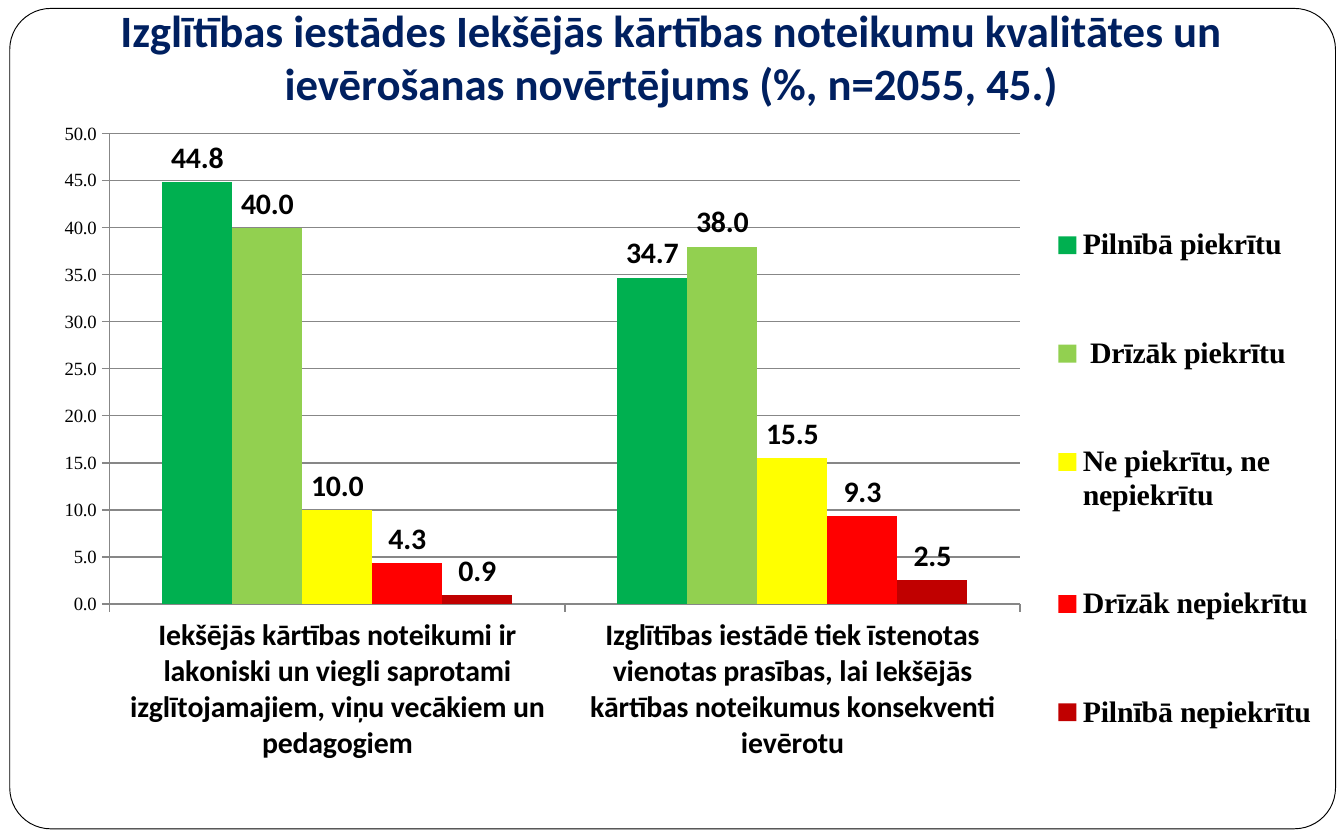
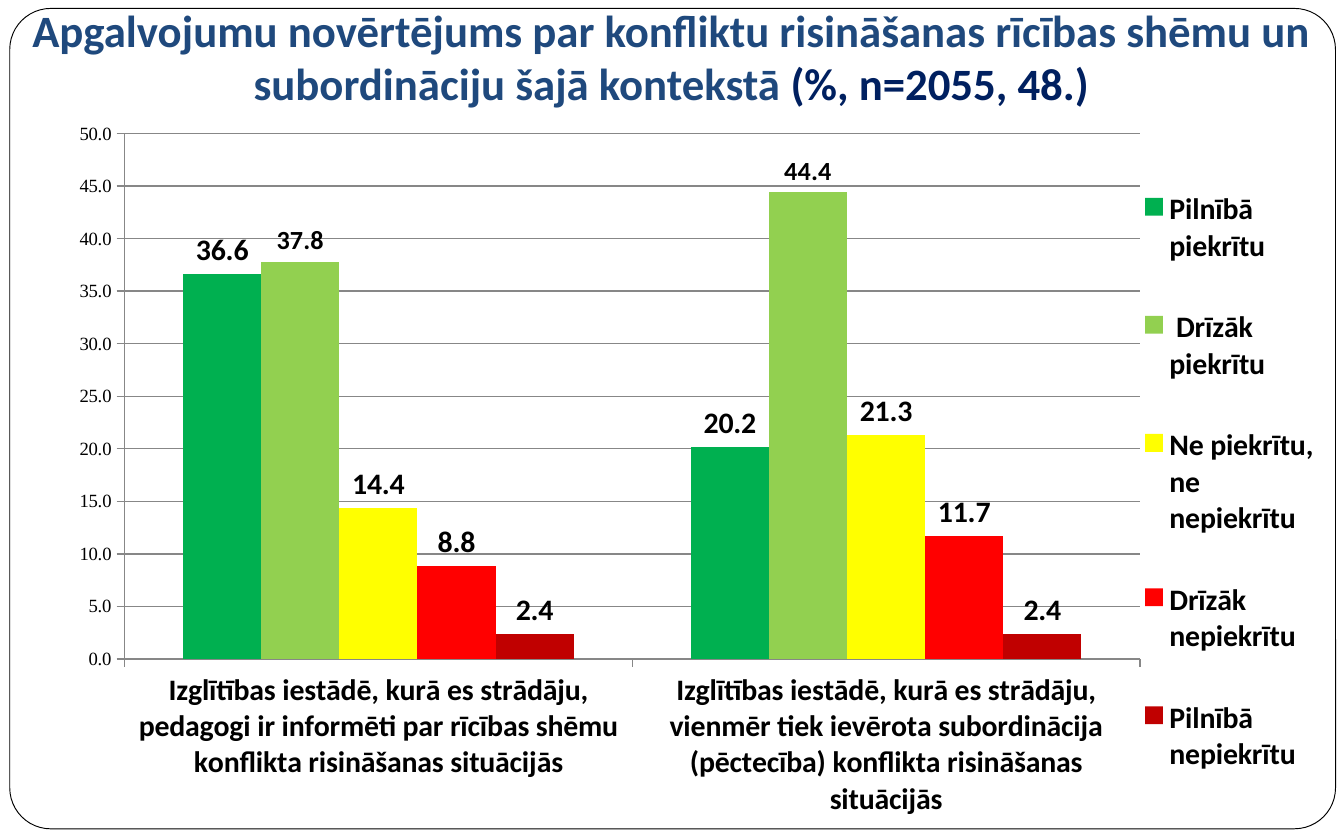
"""Build two survey slides with clustered column charts."""
from lxml import etree
from pptx import Presentation
from pptx import util as u
from pptx.chart import data
from pptx.dml import color
from pptx.enum import chart as ce, shapes, text
from pptx.oxml import ns

PX = 9525
COLORS = {"white": "FFFFFF", "black": "000000", "navy": "002060",
          "blue": "1F497D", "grid": "878787"}
ANSWERS = {"Pilnībā piekrītu": "00B050", " Drīzāk piekrītu": "92D050",
           "Ne piekrītu, ne nepiekrītu": "FFFF00",
           "Drīzāk nepiekrītu": "FF0000", "Pilnībā nepiekrītu": "C00000"}
BOLD = {"name": "Calibri", "size": u.Pt(16), "bold": True}
TITLE = {**BOLD, "size": u.Pt(24)}
FRAME_BOX = (7, 6, 947, 586)
TITLE_BOX = (-49, 12, 1009, 76)

SLIDES = [
    {"title": [("Izglītības iestādes Iekšējās kārtības noteikumu kvalitātes un "
                "ievērošanas novērtējums (%, n=2055, 45.)", "navy")],
     "box": (0, 88, 1032, 512),
     "plot": (0.076, 0.012, 0.63, 0.658),
     "legend": (0.73, 0.04, 0.18, 0.91),
     "legend_pos": ce.XL_LEGEND_POSITION.BOTTOM,
     "legend_font": {**BOLD, "name": "Times New Roman"},
     "label_sizes": [16] * 5,
     "data": {
         "Iekšējās kārtības noteikumi ir lakoniski un viegli saprotami "
         "izglītojamajiem, viņu vecākiem un pedagogiem":
             (44.8, 40, 10, 4.3, 0.9),
         "Izglītības iestādē tiek īstenotas vienotas prasības, lai Iekšējās "
         "kārtības noteikumus konsekventi ievērotu":
             (34.7, 38, 15.5, 9.3, 2.5)}},
    {"title": [("Apgalvojumu novērtējums par konfliktu risināšanas rīcības "
                "shēmu un subordināciju šajā kontekstā ", "blue"),
               ("(%, n=2055, 48.)", "navy")],
     "box": (12, 88, 1013, 512),
     "plot": (0.076, 0.012, 0.716, 0.735),
     "legend": (0.79, 0.03, 0.13, 0.94),
     "legend_pos": ce.XL_LEGEND_POSITION.RIGHT,
     "legend_font": BOLD,
     "label_sizes": [16, 14, 16, 16, 16],
     "data": {
         "Izglītības iestādē, kurā es strādāju, pedagogi ir informēti par "
         "rīcības shēmu konflikta risināšanas situācijās":
             (36.6, 37.8, 14.4, 8.8, 2.4),
         "Izglītības iestādē, kurā es strādāju, vienmēr tiek ievērota "
         "subordinācija (pēctecība) konflikta risināšanas situācijās":
             (20.2, 44.4, 21.3, 11.7, 2.4)}},
]


def rgb(name):
    """Return the colour with this name or hex value."""
    return color.RGBColor.from_string(COLORS.get(name, name))


def emu(box):
    """Turn a box in px into EMU."""
    return [v * PX for v in box]


def apply(obj, values):
    """Set each attribute in a dict of format values."""
    for name, value in values.items():
        setattr(obj, name, value)


def style_font(font, values, name="black"):
    """Give a font its format values and colour."""
    apply(font, values)
    font.color.rgb = rgb(name)


def style_line(line, name, width):
    """Give a line its colour and width in points."""
    line.color.rgb = rgb(name)
    line.width = u.Pt(width)


def add_frame(s):
    """Draw the rounded frame behind everything else."""
    sp = s.shapes.add_shape(shapes.MSO_SHAPE.ROUNDED_RECTANGLE, *emu(FRAME_BOX))
    sp.adjustments[0] = 0.05
    sp.shadow.inherit = False
    sp.fill.solid()
    sp.fill.fore_color.rgb = rgb("white")
    style_line(sp.line, "black", 0.5)
    s.shapes.element.insert(2, sp.element)


def add_title(s, runs):
    """Place the title and write its coloured runs."""
    sp = s.shapes.title
    apply(sp, dict(zip(("left", "top", "width", "height"), emu(TITLE_BOX))))
    tf = sp.text_frame
    apply(tf, {"word_wrap": True, "auto_size": text.MSO_AUTO_SIZE.NONE,
               "vertical_anchor": text.MSO_ANCHOR.BOTTOM,
               "margin_left": u.Inches(0.1), "margin_right": u.Inches(0.1),
               "margin_top": u.Inches(0.05), "margin_bottom": u.Inches(0.1)})
    p = tf.paragraphs[0]
    apply(p, {"alignment": text.PP_ALIGN.CENTER, "space_after": u.Pt(10)})
    pPr = p._p.get_or_add_pPr()
    pPr.set("marL", str(u.Inches(0.5)))
    pPr.set("indent", "0")
    for words, name in runs:
        r = p.add_run()
        r.text = words
        style_font(r.font, TITLE, name)


def set_layout(parent, index, box, inner=False):
    """Fix a chart part at fractions of the chart's size."""
    for old in parent.findall(ns.qn("c:layout")):
        parent.remove(old)
    layout = etree.Element(ns.qn("c:layout"))
    manual = etree.SubElement(layout, ns.qn("c:manualLayout"))
    values = [("layoutTarget", "inner")] if inner else []
    values += [("xMode", "edge"), ("yMode", "edge"), *zip("xywh", box)]
    for tag, value in values:
        etree.SubElement(manual, ns.qn(f"c:{tag}")).set("val", str(value))
    parent.insert(index, layout)


def style_axes(chart):
    """Format both axes and the gridlines."""
    cat, val = chart.category_axis, chart.value_axis
    for axis in (cat, val):
        axis.major_tick_mark = ce.XL_TICK_MARK.OUTSIDE
        style_line(axis.format.line, "grid", 0.75)
    style_font(cat.tick_labels.font, BOLD)
    apply(val, {"minimum_scale": 0, "maximum_scale": 50, "major_unit": 5,
                "has_major_gridlines": True})
    apply(val.tick_labels, {"number_format": "0.0",
                            "number_format_is_linked": False})
    style_line(val.major_gridlines.format.line, "grid", 0.75)


def style_series(series, fill, size):
    """Colour one series and show its values."""
    series.format.fill.solid()
    series.format.fill.fore_color.rgb = rgb(fill)
    series.invert_if_negative = False
    labels = series.data_labels
    apply(labels, {"show_value": True, "number_format": "0.0",
                   "number_format_is_linked": False,
                   "position": ce.XL_LABEL_POSITION.OUTSIDE_END})
    style_font(labels.font, {**BOLD, "size": u.Pt(size)})


def add_columns(s, content):
    """Add the column chart with its legend."""
    cd = data.CategoryChartData(number_format="0.0")
    cd.categories = list(content["data"])
    for answer, values in zip(ANSWERS, zip(*content["data"].values())):
        cd.add_series(answer, values)
    chart = s.shapes.add_chart(ce.XL_CHART_TYPE.COLUMN_CLUSTERED,
                               *emu(content["box"]), cd).chart
    style_font(chart.font, {"name": "Times New Roman", "size": u.Pt(10)})
    apply(chart, {"has_title": False, "has_legend": True})
    plot = chart.plots[0]
    apply(plot, {"gap_width": 150, "vary_by_categories": False})
    style_axes(chart)
    for series, fill, size in zip(plot.series, ANSWERS.values(),
                                  content["label_sizes"]):
        style_series(series, fill, size)
    apply(chart.legend, {"position": content["legend_pos"],
                         "include_in_layout": False})
    style_font(chart.legend.font, content["legend_font"])
    root = chart._chartSpace
    set_layout(root.xpath("c:chart/c:plotArea")[0], 0, content["plot"], True)
    set_layout(root.xpath("c:chart/c:legend")[0], 1, content["legend"])


def main():
    """Build and save the slides."""
    prs = Presentation()
    apply(prs, {"slide_width": 960 * PX, "slide_height": 600 * PX})
    for content in SLIDES:
        s = prs.slides.add_slide(prs.slide_layouts[5])
        add_frame(s)
        add_title(s, content["title"])
        add_columns(s, content)
    prs.save("out.pptx")


if __name__ == "__main__":
    main()
